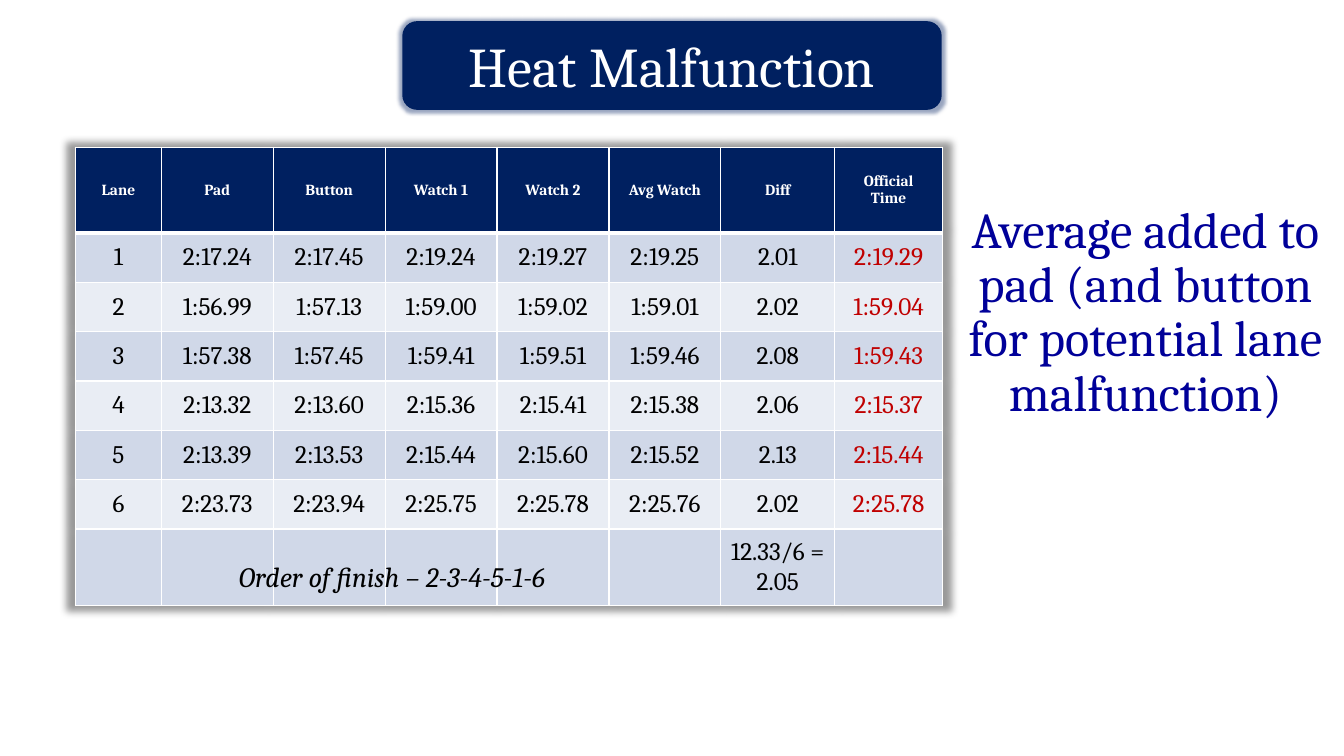
import pptx
import pptx.dml.color
import pptx.enum.shapes
import pptx.enum.text
import pptx.oxml
import pptx.oxml.ns
import pptx.util

Inches = pptx.util.Inches
Pt = pptx.util.Pt
RGBColor = pptx.dml.color.RGBColor
CENTER = pptx.enum.text.PP_ALIGN.CENTER
MIDDLE = pptx.enum.text.MSO_ANCHOR.MIDDLE

NAVY = RGBColor(0x00, 0x20, 0x60)
BLUE = RGBColor(0x00, 0x00, 0x99)
RED = RGBColor(0xC0, 0x00, 0x00)
WHITE = RGBColor(0xFF, 0xFF, 0xFF)
BLACK = RGBColor(0x00, 0x00, 0x00)
BAND_DARK = RGBColor(0xD0, 0xD8, 0xE8)
BAND_LIGHT = RGBColor(0xE9, 0xED, 0xF4)

HEADERS = ["Lane", "Pad", "Button", "Watch 1", "Watch 2", "Avg Watch", "Diff", "Official Time"]
LANES = [
    ["1", "2:17.24", "2:17.45", "2:19.24", "2:19.27", "2:19.25", "2.01", "2:19.29"],
    ["2", "1:56.99", "1:57.13", "1:59.00", "1:59.02", "1:59.01", "2.02", "1:59.04"],
    ["3", "1:57.38", "1:57.45", "1:59.41", "1:59.51", "1:59.46", "2.08", "1:59.43"],
    ["4", "2:13.32", "2:13.60", "2:15.36", "2:15.41", "2:15.38", "2.06", "2:15.37"],
    ["5", "2:13.39", "2:13.53", "2:15.44", "2:15.60", "2:15.52", "2.13", "2:15.44"],
    ["6", "2:23.73", "2:23.94", "2:25.75", "2:25.78", "2:25.76", "2.02", "2:25.78"],
]
AVERAGE = ["", "", "", "", "", "", "12.33/6 = 2.05", ""]
COLUMN_WIDTHS = [0.85] + [1.11] * 5 + [1.13, 1.07]
ROW_HEIGHTS = [0.85] + [0.49] * 6 + [0.76]


def drawing_element(xml):
    """Parse one element whose root takes the drawing namespace."""
    root, rest = xml.split(">", 1)
    return pptx.oxml.parse_xml(f"{root} {pptx.oxml.ns.nsdecls('a')}>{rest}")


def write(paragraph, text, size, color, alignment=None, **formats):
    paragraph.alignment = alignment
    paragraph.text = text
    formats = {"name": "Cambria", "size": Pt(size), **formats}
    for name, value in formats.items():
        setattr(paragraph.font, name, value)
    paragraph.font.color.rgb = color


def add_title(slide, left, top, width, height):
    shape = slide.shapes.add_shape(
        pptx.enum.shapes.MSO_SHAPE.ROUNDED_RECTANGLE,
        Inches(left), Inches(top), Inches(width), Inches(height))
    shape.fill.solid()
    shape.fill.fore_color.rgb = NAVY
    shape.line.fill.background()
    shape._element.spPr.append(drawing_element(
        f'<a:effectLst><a:glow rad="{Pt(5)}"><a:srgbClr val="{NAVY}">'
        '<a:alpha val="40000"/></a:srgbClr></a:glow>'
        f'<a:outerShdw blurRad="{Pt(4)}" dist="{Pt(4)}" dir="5400000">'
        f'<a:srgbClr val="{WHITE}"/></a:outerShdw></a:effectLst>'))
    shape.text_frame.vertical_anchor = MIDDLE
    write(shape.text_frame.paragraphs[0], "Heat Malfunction", 40, WHITE, CENTER)


def add_cell_borders(cell, row):
    properties = cell._tc.get_or_add_tcPr()
    widths = {"L": 1, "R": 1, "T": 3 if row == 1 else 1, "B": 3 if row == 0 else 1}
    for index, (side, width) in enumerate(widths.items()):
        properties.insert(index, drawing_element(
            f'<a:ln{side} w="{Pt(width)}"><a:solidFill><a:srgbClr val="{WHITE}"/>'
            f'</a:solidFill></a:ln{side}>'))


def add_times_table(slide, left, top, width, height):
    rows = [HEADERS, *LANES, AVERAGE]
    table = slide.shapes.add_table(
        len(rows), len(HEADERS),
        Inches(left), Inches(top), Inches(width), Inches(height)).table
    table._tbl.tblPr.insert(0, drawing_element(
        f'<a:effectLst><a:outerShdw blurRad="{Pt(5)}" sx="102000" sy="102000" algn="ctr">'
        f'<a:srgbClr val="{BLACK}"><a:alpha val="40000"/></a:srgbClr>'
        '</a:outerShdw></a:effectLst>'))
    for column, column_width in zip(table.columns, COLUMN_WIDTHS):
        column.width = Inches(column_width)
    for row, (texts, row_height) in enumerate(zip(rows, ROW_HEIGHTS)):
        table.rows[row].height = Inches(row_height)
        for column, text in enumerate(texts):
            cell = table.cell(row, column)
            cell.vertical_anchor = MIDDLE
            cell.fill.solid()
            paragraph = cell.text_frame.paragraphs[0]
            if row == 0:
                cell.fill.fore_color.rgb = NAVY
                write(paragraph, text, 11, WHITE, CENTER, bold=True)
            else:
                cell.fill.fore_color.rgb = BAND_DARK if row % 2 else BAND_LIGHT
                color = RED if column == len(HEADERS) - 1 else BLACK
                write(paragraph, text, 18, color, CENTER, bold=False)
            add_cell_borders(cell, row)


def add_text(slide, left, top, width, height):
    """Add a wrapping text box and return its first paragraph."""
    box = slide.shapes.add_textbox(Inches(left), Inches(top), Inches(width), Inches(height))
    box.text_frame.word_wrap = True
    return box.text_frame.paragraphs[0]


def add_finish_order(slide, left, top, width, height):
    paragraph = add_text(slide, left, top, width, height)
    properties = paragraph._p.get_or_add_pPr()
    properties.set("marL", str(Inches(0.38)))
    properties.set("indent", str(Inches(-0.38)))
    write(paragraph, "Order of finish – 2-3-4-5-1-6", 20, BLACK, italic=True)


def add_note(slide, left, top, width, height):
    paragraph = add_text(slide, left, top, width, height)
    paragraph.line_spacing = 0.9
    write(paragraph, "Average added to pad (and button for potential lane malfunction)",
          36, BLUE, CENTER)


def main():
    presentation = pptx.Presentation()
    presentation.slide_width = Inches(13.33)
    presentation.slide_height = Inches(7.5)
    slide = presentation.slides.add_slide(presentation.slide_layouts[6])
    add_times_table(slide, 0.75, 1.46, 8.59, 4.59)
    add_finish_order(slide, 2.27, 5.5, 4.15, 0.38)
    add_note(slide, 9.5, 1.98, 3.72, 2.82)
    add_title(slide, 3.99, 0.21, 5.35, 0.88)
    presentation.save("out.pptx")


if __name__ == "__main__":
    main()
